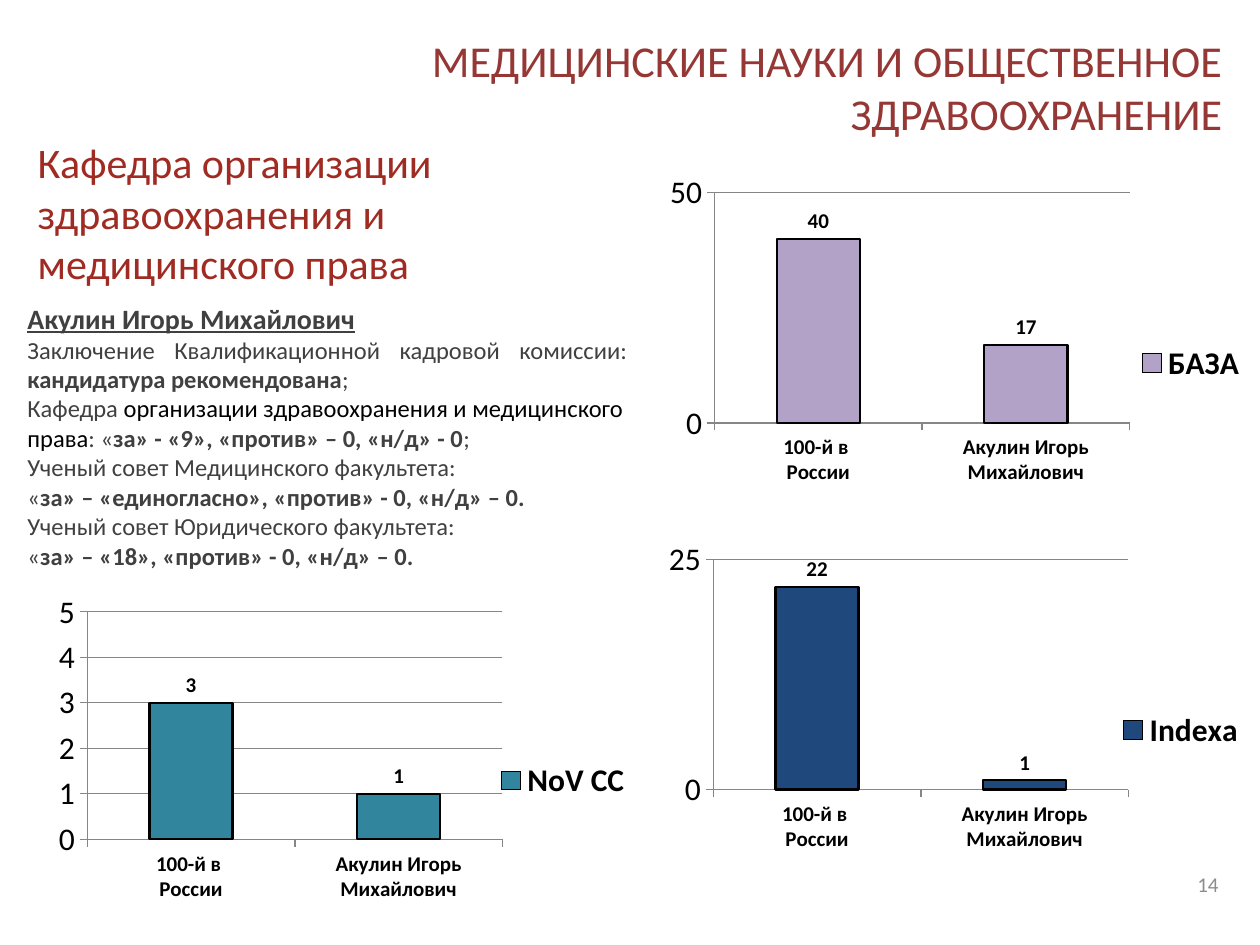
from dataclasses import dataclass

from lxml import etree
from pptx import Presentation
from pptx.chart.data import CategoryChartData
from pptx.dml.color import RGBColor
from pptx.enum.chart import XL_CHART_TYPE, XL_LABEL_POSITION, XL_LEGEND_POSITION, XL_TICK_MARK
from pptx.enum.text import MSO_ANCHOR, PP_ALIGN
from pptx.oxml.ns import qn
from pptx.util import Inches, Pt

COLUMNS = XL_CHART_TYPE.COLUMN_CLUSTERED
LABEL_ABOVE = XL_LABEL_POSITION.OUTSIDE_END
LEGEND_RIGHT = XL_LEGEND_POSITION.RIGHT
TICK_OUTSIDE, TICK_NONE = XL_TICK_MARK.OUTSIDE, XL_TICK_MARK.NONE
TOP, MIDDLE = MSO_ANCHOR.TOP, MSO_ANCHOR.MIDDLE
LEFT, RIGHT, JUSTIFY = PP_ALIGN.LEFT, PP_ALIGN.RIGHT, PP_ALIGN.JUSTIFY


@dataclass(frozen=True)
class Theme:
    font: str = "Calibri"
    title: str = "953735"
    department: str = "9F2B22"
    body: str = "404040"
    black: str = "000000"
    page_number: str = "8C8C8C"
    axis: str = "868686"
    title_size: float = 25.2
    department_size: int = 24
    name_size: int = 16
    body_size: int = 14
    chart_size: int = 18
    small_size: int = 12


theme = Theme()


def style_font(font, size, color, bold=False):
    font.name = theme.font
    font.size = Pt(size)
    font.bold = bold
    font.color.rgb = RGBColor.from_string(color)


def add_text(page, place, paragraphs, anchor=MIDDLE):
    """Each paragraph is (alignment, spans); each span is (text, size, colour, bold)."""
    box = page.shapes.add_textbox(*map(Inches, place))
    frame = box.text_frame
    frame.word_wrap = True
    frame.vertical_anchor = anchor
    for index, (alignment, spans) in enumerate(paragraphs):
        para = frame.paragraphs[0] if index == 0 else frame.add_paragraph()
        para.alignment = alignment
        for text, size, color, bold in spans:
            span = para.add_run()
            span.text = text
            style_font(span.font, size, color, bold)
    return frame


deck = Presentation()
deck.slide_width, deck.slide_height = Inches(10), Inches(7.5)
page = deck.slides.add_slide(deck.slide_layouts[6])

# Headings and page number
add_text(page, (2.56, 0.3, 7.24, 0.77), [
    (RIGHT, [("МЕДИЦИНСКИЕ НАУКИ И ОБЩЕСТВЕННОЕ ЗДРАВООХРАНЕНИЕ",
              theme.title_size, theme.title, False)])])
add_text(page, (0.2, 1.03, 4.25, 1.31), [
    (LEFT, [("Кафедра организации здравоохранения и медицинского права",
             theme.department_size, theme.department, False)])])
add_text(page, (7.44, 6.82, 2.33, 0.4), [
    (RIGHT, [("14", theme.small_size, theme.page_number, False)])])

# Candidate and votes
plain = (theme.body_size, theme.body, False)
strong = (theme.body_size, theme.body, True)
dark = (theme.body_size, theme.black, False)
candidate = add_text(page, (0.12, 2.34, 4.96, 2.49), [
    (JUSTIFY, [("Акулин Игорь Михайлович", theme.name_size, theme.body, True)]),
    (JUSTIFY, [("Заключение Квалификационной кадровой комиссии: ", *plain),
               ("кандидатура рекомендована", *strong), (";", *plain)]),
    (LEFT, [("Кафедра ", *plain),
            ("организации здравоохранения и медицинского права", *dark),
            (": «", *plain),
            ("за» - «9», «против» – 0, «н/д» - 0", *strong), (";", *plain)]),
    (LEFT, [("Ученый совет Медицинского факультета:", *plain)]),
    (LEFT, [("«", *plain),
            ("за» – «единогласно», «против» - 0, «н/д» – 0.", *strong)]),
    (LEFT, [("Ученый совет Юридического факультета:", *plain)]),
    (LEFT, [("«", *plain),
            ("за» – «18», «против» - 0, «н/д» – 0.", *strong)]),
], TOP)
candidate.paragraphs[0].runs[0].font.underline = True

# Citation charts: name, values, colour, left, top, axis maximum, axis step, plot area
charts = [
    ("Indexa", (22, 1), "1F497D", 5.07, 4.22, 25, 25, (0.12, 0.07, 0.67, 0.58)),
    ("БАЗА", (40, 17), "B3A2C7", 5.08, 1.31, 50, 50, (0.12, 0.07, 0.67, 0.58)),
    ("NoV CC", (3, 1), "31859C", 0.2, 4.62, 5, 1, (0.1, 0.075, 0.67, 0.573)),
]
for name, values, color, left, top, maximum, step, plot_area in charts:
    data = CategoryChartData()
    data.categories = ["100-й в \nРоссии", "Акулин Игорь Михайлович"]
    data.add_series(name, values)
    chart = page.shapes.add_chart(
        COLUMNS, Inches(left), Inches(top), Inches(4.92), Inches(3.15), data).chart
    chart.has_title = False
    style_font(chart.font, theme.chart_size, theme.black)
    chart.has_legend = True
    chart.legend.position = LEGEND_RIGHT
    chart.legend.include_in_layout = False
    style_font(chart.legend.font, theme.chart_size, theme.black, True)

    plot = chart.plots[0]
    plot.gap_width = 150
    plot.vary_by_categories = False
    series = plot.series[0]
    series.format.fill.solid()
    series.format.fill.fore_color.rgb = RGBColor.from_string(color)
    series.format.line.color.rgb = RGBColor.from_string(theme.black)
    series.format.line.width = Pt(1.25)
    labels = series.data_labels
    labels.show_value = True
    labels.position = LABEL_ABOVE
    style_font(labels.font, theme.small_size, theme.black, True)

    category_axis, value_axis = chart.category_axis, chart.value_axis
    value_axis.minimum_scale, value_axis.maximum_scale = 0, maximum
    value_axis.major_unit = step
    value_axis.has_major_gridlines = True
    for axis in (category_axis, value_axis):
        axis.major_tick_mark = TICK_OUTSIDE
        axis.minor_tick_mark = TICK_NONE
    style_font(category_axis.tick_labels.font, theme.small_size, theme.black, True)
    style_font(value_axis.tick_labels.font, theme.chart_size, theme.black)
    for part in (category_axis, value_axis, value_axis.major_gridlines):
        part.format.line.color.rgb = RGBColor.from_string(theme.axis)
        part.format.line.width = Pt(0.75)

    # Fixed inner plot area, as fractions of the chart
    area = chart.element.find(".//" + qn("c:plotArea"))
    for automatic in area.findall(qn("c:layout")):
        area.remove(automatic)
    layout = etree.Element(qn("c:layout"))
    area.insert(0, layout)
    manual = etree.SubElement(layout, qn("c:manualLayout"))
    settings = [("layoutTarget", "inner"), ("xMode", "edge"), ("yMode", "edge"),
                *zip("xywh", plot_area)]
    for tag, value in settings:
        etree.SubElement(manual, qn("c:" + tag)).set("val", str(value))

deck.save("out.pptx")
